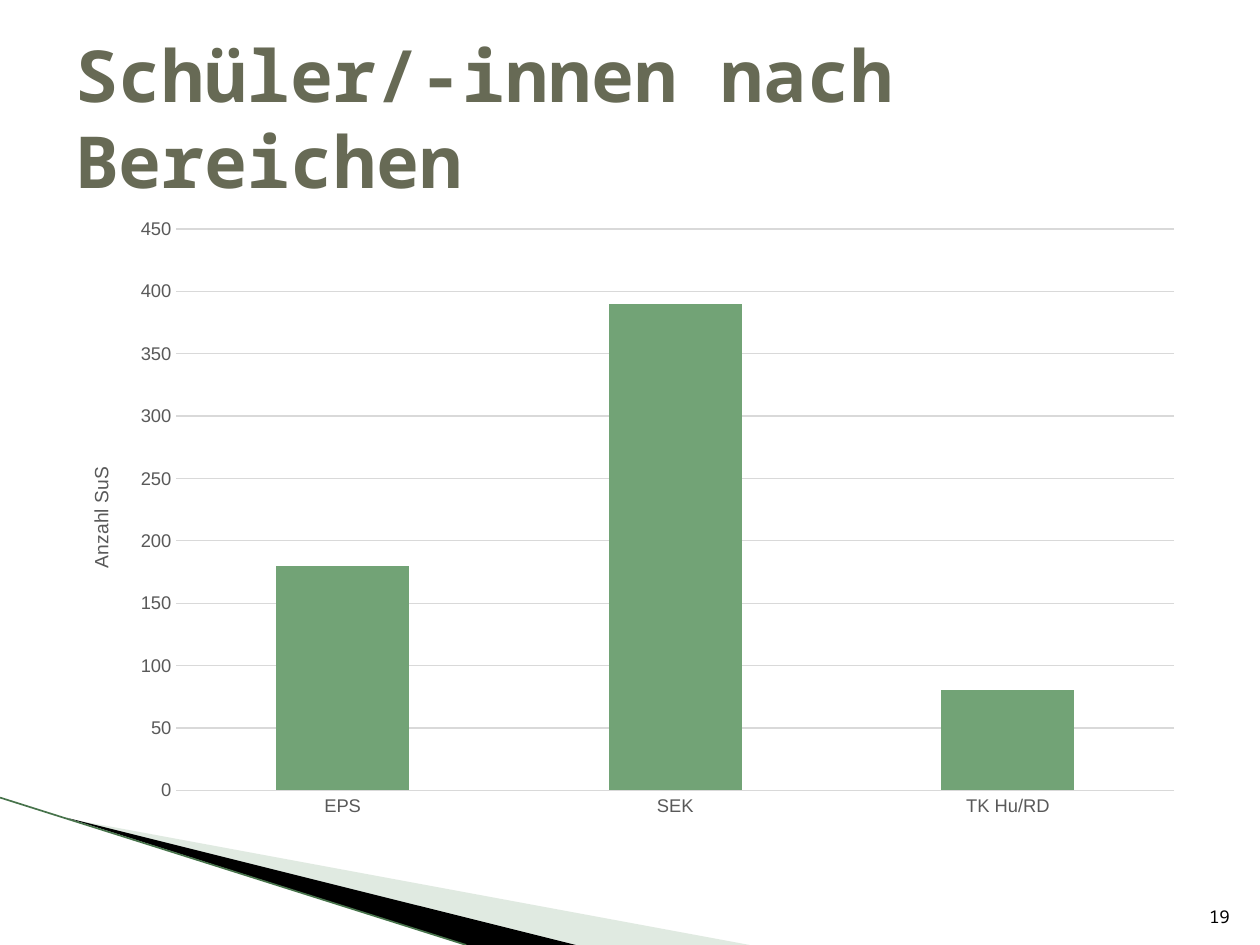
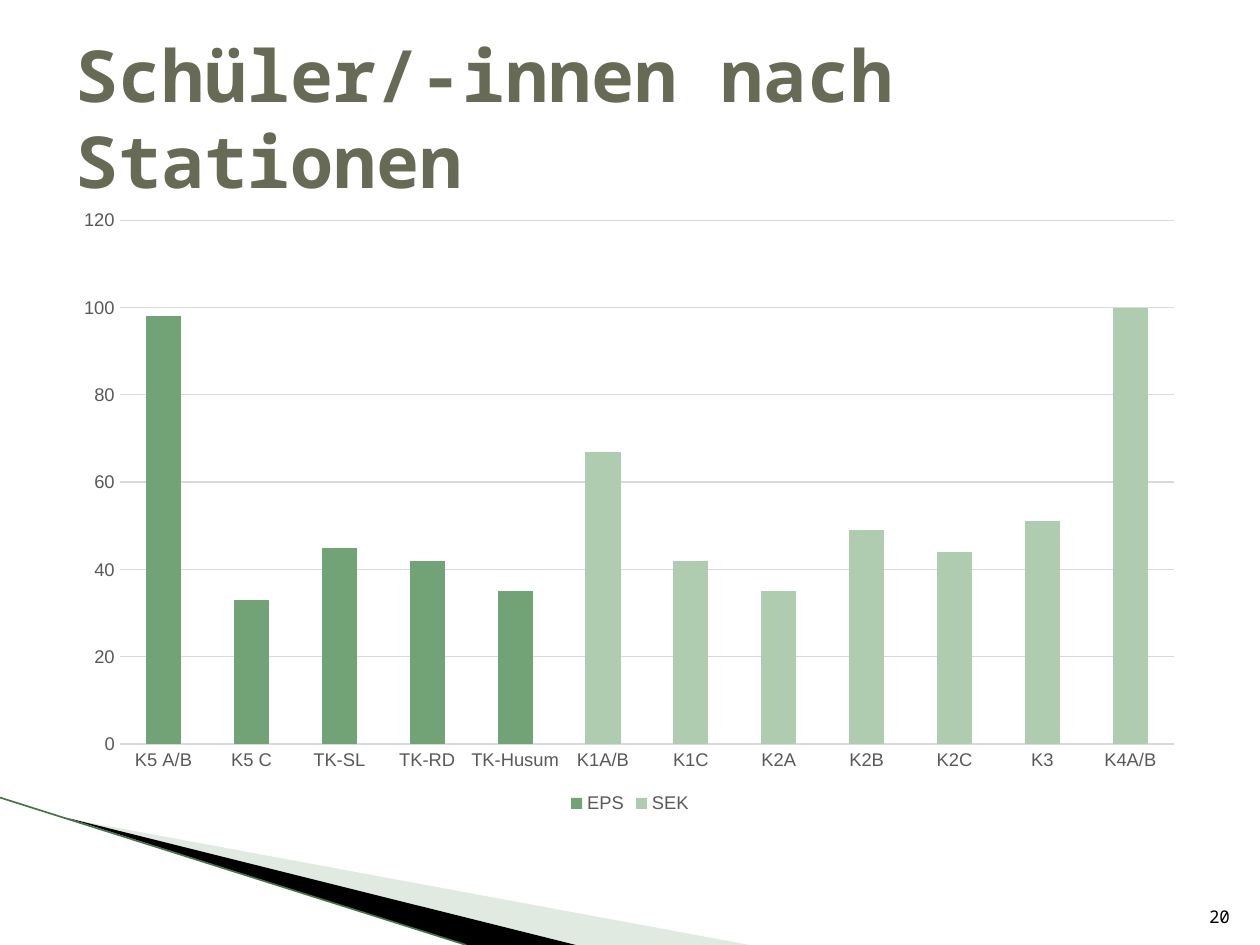
from lxml.etree import SubElement
from pptx import Presentation
from pptx.chart.data import CategoryChartData
from pptx.dml.color import RGBColor
from pptx.enum.chart import XL_CHART_TYPE, XL_LEGEND_POSITION, XL_TICK_MARK
from pptx.enum.shapes import MSO_CONNECTOR
from pptx.enum.text import MSO_ANCHOR, PP_ALIGN
from pptx.oxml import parse_xml
from pptx.oxml.ns import nsdecls, qn
from pptx.util import Inches, Pt

MONO, SANS = "Noto Sans Mono", "Arial"
OLIVE, BLACK, GRAY, GRID = "676A55", "000000", "595959", "D9D9D9"
GREEN, MINT, PALE, EDGE = "72A376", "B0CCB0", "B3CBB5", "47734B"


def color(value):
    return RGBColor.from_string(value)


def style(font, size, name, tint, bold=False):
    font.size, font.name, font.bold = Pt(size), name, bold
    font.color.rgb = color(tint)


class Deck:
    def __init__(self):
        self.prs = Presentation()
        self.prs.slide_width, self.prs.slide_height = Inches(10), Inches(7.5)
        self.slide = None

    def page(self, title, number):
        """Start a slide with the corner wedge, page number and title."""
        self.slide = self.prs.slides.add_slide(self.prs.slide_layouts[6])
        self.wedge([(0.55, 6.5), (5.95, 7.5), (4.56, 7.5)], PALE, 40)
        self.wedge([(0.53, 6.49), (4.57, 7.5), (3.7, 7.5)], BLACK)
        self.line((0, 6.33), (3.7, 7.5), EDGE, 0.95)
        self.text(str(number), (9.46, 7.01, 0.4, 0.4), size=10, tint=BLACK,
                  align=PP_ALIGN.RIGHT, anchor=MSO_ANCHOR.BOTTOM)
        self.text(title, (0.5, 0.3, 9, 1.25), size=41, tint=OLIVE, bold=True)

    def text(self, words, box, size, tint, bold=False,
             align=PP_ALIGN.LEFT, anchor=MSO_ANCHOR.MIDDLE):
        frame = self.slide.shapes.add_textbox(*map(Inches, box)).text_frame
        frame.word_wrap, frame.vertical_anchor = True, anchor
        para = frame.paragraphs[0]
        para.alignment = align
        run = para.add_run()
        run.text = words
        style(run.font, size, MONO, tint, bold)

    def wedge(self, points, tint, alpha=100):
        """Draw a filled outline; alpha is its opacity in percent."""
        start, *rest = [(Inches(x), Inches(y)) for x, y in points]
        pen = self.slide.shapes.build_freeform(*start)
        pen.add_line_segments(rest, close=True)
        shape = pen.convert_to_shape()
        shape.shadow.inherit = False
        shape.line.fill.background()
        shape.fill.solid()
        shape.fill.fore_color.rgb = color(tint)
        if alpha < 100:
            fill = shape.element.spPr.find(".//" + qn("a:srgbClr"))
            SubElement(fill, qn("a:alpha"), val=str(alpha * 1000))

    def line(self, start, end, tint, width):
        ends = map(Inches, start + end)
        line = self.slide.shapes.add_connector(MSO_CONNECTOR.STRAIGHT, *ends)
        line.line.color.rgb, line.line.width = color(tint), Pt(width)
        SubElement(line.element.spPr, qn("a:effectLst"))

    def chart(self, top, names, series, scale, area, label=None):
        """Add stacked columns; series holds (name, values, colour),
        scale (maximum, step), area the plot as fractions of the chart."""
        data = CategoryChartData()
        data.categories = names
        for name, values, _ in series:
            data.add_series(name, values)
        box = map(Inches, (0.5, top, 9, 4.95))
        chart = self.slide.shapes.add_chart(
            XL_CHART_TYPE.COLUMN_STACKED, *box, data).chart
        style(chart.font, 10.5, SANS, GRAY)
        chart.has_title = False
        plot = chart.plots[0]
        plot.gap_width, plot.overlap, plot.vary_by_categories = 150, 100, False
        for bars, (_, _, tint) in zip(plot.series, series):
            bars.format.fill.solid()
            bars.format.fill.fore_color.rgb = color(tint)
        for axis in (chart.category_axis, chart.value_axis):
            axis.major_tick_mark = axis.minor_tick_mark = XL_TICK_MARK.NONE
            axis.format.line.fill.background()
            style(axis.tick_labels.font, 10.5, SANS, GRAY)
        axis = chart.value_axis
        axis.minimum_scale = 0
        axis.maximum_scale, axis.major_unit = scale
        grid = axis.major_gridlines.format.line
        grid.color.rgb, grid.width = color(GRID), Pt(0.75)
        if label:
            frame = axis.axis_title.text_frame
            frame.text = label
            style(frame.paragraphs[0].runs[0].font, 11, SANS, GRAY)
        chart.has_legend = len(series) > 1
        if chart.has_legend:
            chart.legend.position = XL_LEGEND_POSITION.BOTTOM
            chart.legend.include_in_layout = False
            style(chart.legend.font, 10.5, SANS, GRAY)
        self.place(chart, area)

    def place(self, chart, area):
        """Fix the inner plot area at (x, y, w, h)."""
        plot = chart.element.find(".//" + qn("c:plotArea"))
        for old in plot.findall(qn("c:layout")):
            plot.remove(old)
        sizes = "".join(f'<c:{key} val="{part}"/>'
                        for key, part in zip("xywh", area))
        plot.insert(0, parse_xml(
            f'<c:layout {nsdecls("c")}><c:manualLayout>'
            '<c:layoutTarget val="inner"/><c:xMode val="edge"/>'
            f'<c:yMode val="edge"/>{sizes}</c:manualLayout></c:layout>'))


def main():
    deck = Deck()
    deck.page("Schüler/-innen nach Bereichen", 19)
    deck.chart(1.62, ["EPS", "SEK", "TK Hu/RD"],
               [("Series 1", [180, 390, 80], GREEN)],
               (450, 50), (0.1, 0.04, 0.88, 0.9), "Anzahl SuS")

    deck.page("Schüler/-innen nach Stationen", 20)
    eps = {"K5 A/B": 98, "K5 C": 33, "TK-SL": 45, "TK-RD": 42, "TK-Husum": 35}
    sek = {"K1A/B": 67, "K1C": 42, "K2A": 35, "K2B": 49, "K2C": 44,
           "K3": 51, "K4A/B": 100}
    names = [*eps, *sek]
    deck.chart(1.55, names,
               [("EPS", [eps.get(name) for name in names], GREEN),
                ("SEK", [sek.get(name) for name in names], MINT)],
               (120, 20), (0.05, 0.04, 0.93, 0.84))
    deck.prs.save("out.pptx")


if __name__ == "__main__":
    main()
